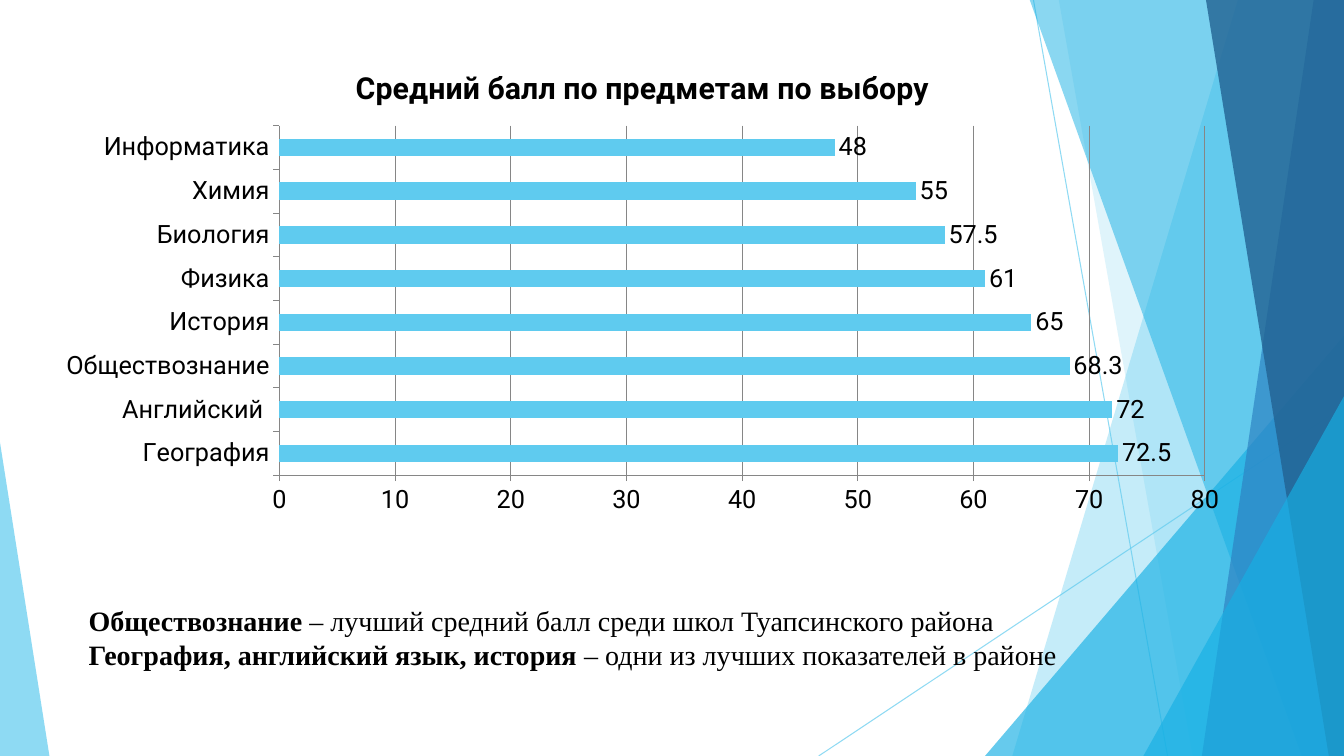
from dataclasses import dataclass

from lxml.etree import SubElement
from pptx import Presentation
from pptx.chart.data import CategoryChartData
from pptx.dml.color import RGBColor
from pptx.enum.chart import XL_CHART_TYPE, XL_LABEL_POSITION, XL_TICK_MARK
from pptx.enum.shapes import MSO_CONNECTOR, MSO_SHAPE
from pptx.enum.text import MSO_AUTO_SIZE
from pptx.oxml.ns import qn
from pptx.util import Pt

PX = 9144
WIDE, HIGH = 1333, 750


@dataclass(frozen=True)
class Theme:
    """Colours, fonts and type sizes of the slide."""

    sky: str = "5FCBEF"
    cyan: str = "17B0E4"
    blue: str = "2E83C3"
    navy: str = "226292"
    ink: str = "000000"
    grid: str = "868686"
    sans: str = "Roboto"
    serif: str = "Times New Roman"
    head: float = 21.6
    label: int = 18
    body: int = 20
    hair: float = 0.75


THEME = Theme()


@dataclass(frozen=True)
class Ray:
    """A thin line between two points."""

    start: tuple[int, int]
    end: tuple[int, int]


@dataclass(frozen=True)
class Band:
    """A full-height band from a slanted left edge to the right side."""

    top: int
    base: int
    color: str
    alpha: int


@dataclass(frozen=True)
class Wedge:
    """A triangle standing on the bottom edge, with its peak at a share of the width."""

    left: int
    top: int
    width: int
    peak: int
    color: str
    alpha: int


RAYS = [Ray((1025, 0), (1158, HIGH)), Ray((WIDE, 403), (812, HIGH))]
FACETS = [
    Band(1228, 1004, THEME.sky, 36),
    Band(1050, 1183, THEME.sky, 20),
    Wedge(977, 333, 356, 1, THEME.cyan, 66),
    Band(1021, 1291, THEME.cyan, 50),
    Band(1303, 1192, THEME.blue, 70),
    Band(1196, 1318, THEME.navy, 80),
    Wedge(1134, 393, 199, 1, THEME.cyan, 66),
    Wedge(0, 439, 49, 0, THEME.sky, 70),
]
NOTES = [
    ("Обществознание ", "– лучший средний балл среди школ Туапсинского района"),
    ("География, английский язык, история ", "– одни из лучших показателей в районе"),
]
TITLE = "Средний балл по предметам по выбору"
SCORES = {
    "География": 72.5,
    "Английский ": 72,
    "Обществознание": 68.3,
    "История": 65,
    "Физика": 61,
    "Биология": 57.5,
    "Химия": 55,
    "Информатика": 48,
}


def box(*sides: int) -> list[int]:
    """Turn px lengths into EMU."""
    return [side * PX for side in sides]


def tint(fill, color: str, alpha: int = 100) -> None:
    """Make a fill solid with a given opacity in percent."""
    fill.solid()
    fill.fore_color.rgb = RGBColor.from_string(color)
    if alpha < 100:
        node = fill._xPr.find(".//" + qn("a:srgbClr"))
        SubElement(node, qn("a:alpha")).set("val", str(alpha * 1000))


def style(font, size: float, name: str, bold: bool | None = None) -> None:
    """Set the size, face and weight of a font in ink colour."""
    font.size, font.name, font.bold = Pt(size), name, bold
    font.color.rgb = RGBColor.from_string(THEME.ink)


def draw_ray(slide, ray: Ray) -> None:
    """Draw one thin line."""
    line = slide.shapes.add_connector(
        MSO_CONNECTOR.STRAIGHT, *box(*ray.start, *ray.end)
    )
    line.line.width = Pt(THEME.hair)
    tint(line.line.fill, THEME.sky, 70)
    SubElement(line._element.spPr, qn("a:effectLst"))


def draw_facet(slide, facet: Band | Wedge) -> None:
    """Draw one translucent band or wedge."""
    if isinstance(facet, Band):
        pen = slide.shapes.build_freeform(facet.top, -1, scale=PX)
        pen.add_line_segments([(WIDE, -1), (WIDE, HIGH), (facet.base, HIGH)])
        shape = pen.convert_to_shape()
    else:
        shape = slide.shapes.add_shape(
            MSO_SHAPE.ISOSCELES_TRIANGLE,
            *box(facet.left, facet.top, facet.width, HIGH - facet.top),
        )
        shape.adjustments[0] = facet.peak
    shape.shadow.inherit = False
    tint(shape.fill, facet.color, facet.alpha)
    shape.line.fill.background()


def draw_notes(slide) -> None:
    """Write the remarks under the chart."""
    frame = slide.shapes.add_textbox(*box(78, 594, 1039, 111)).text_frame
    frame.word_wrap = True
    frame.auto_size = MSO_AUTO_SIZE.SHAPE_TO_FIT_TEXT
    for i, (lead, rest) in enumerate(NOTES):
        para = frame.add_paragraph() if i else frame.paragraphs[0]
        style(para.font, THEME.body, THEME.serif)
        for text, bold in ((lead, True), (rest, False)):
            run = para.add_run()
            run.text, run.font.bold = text, bold


def draw_chart(slide) -> None:
    """Add the bar chart of mean scores."""
    data = CategoryChartData()
    data.categories = list(SCORES)
    data.add_series(TITLE, list(SCORES.values()))
    chart = slide.shapes.add_chart(
        XL_CHART_TYPE.BAR_CLUSTERED, *box(42, 47, 1191, 473), data
    ).chart
    style(chart.font, THEME.label, THEME.sans)
    chart.has_legend = False
    chart.has_title = True
    chart.chart_title.include_in_layout = False
    para = chart.chart_title.text_frame.paragraphs[0]
    para.add_run().text = TITLE
    style(para.font, THEME.head, THEME.sans, True)

    scale = chart.value_axis
    scale.minimum_scale, scale.maximum_scale, scale.major_unit = 0, 80, 10
    scale.has_major_gridlines = True
    for axis in (scale, chart.category_axis):
        axis.major_tick_mark = XL_TICK_MARK.OUTSIDE
        axis.minor_tick_mark = XL_TICK_MARK.NONE
    for part in (scale, chart.category_axis, scale.major_gridlines):
        part.format.line.width = Pt(THEME.hair)
        tint(part.format.line.fill, THEME.grid)

    plot = chart.plots[0]
    plot.gap_width, plot.vary_by_categories = 150, False
    tint(plot.series[0].format.fill, THEME.sky)
    labels = plot.series[0].data_labels
    labels.show_value = True
    labels.position = XL_LABEL_POSITION.OUTSIDE_END
    style(labels.font, THEME.label, THEME.sans)


def main() -> None:
    """Build the slide and save it."""
    deck = Presentation()
    deck.slide_width, deck.slide_height = box(WIDE, HIGH)
    slide = deck.slides.add_slide(deck.slide_layouts[6])
    for ray in RAYS:
        draw_ray(slide, ray)
    for facet in FACETS:
        draw_facet(slide, facet)
    draw_notes(slide)
    draw_chart(slide)
    deck.save("out.pptx")


if __name__ == "__main__":
    main()
